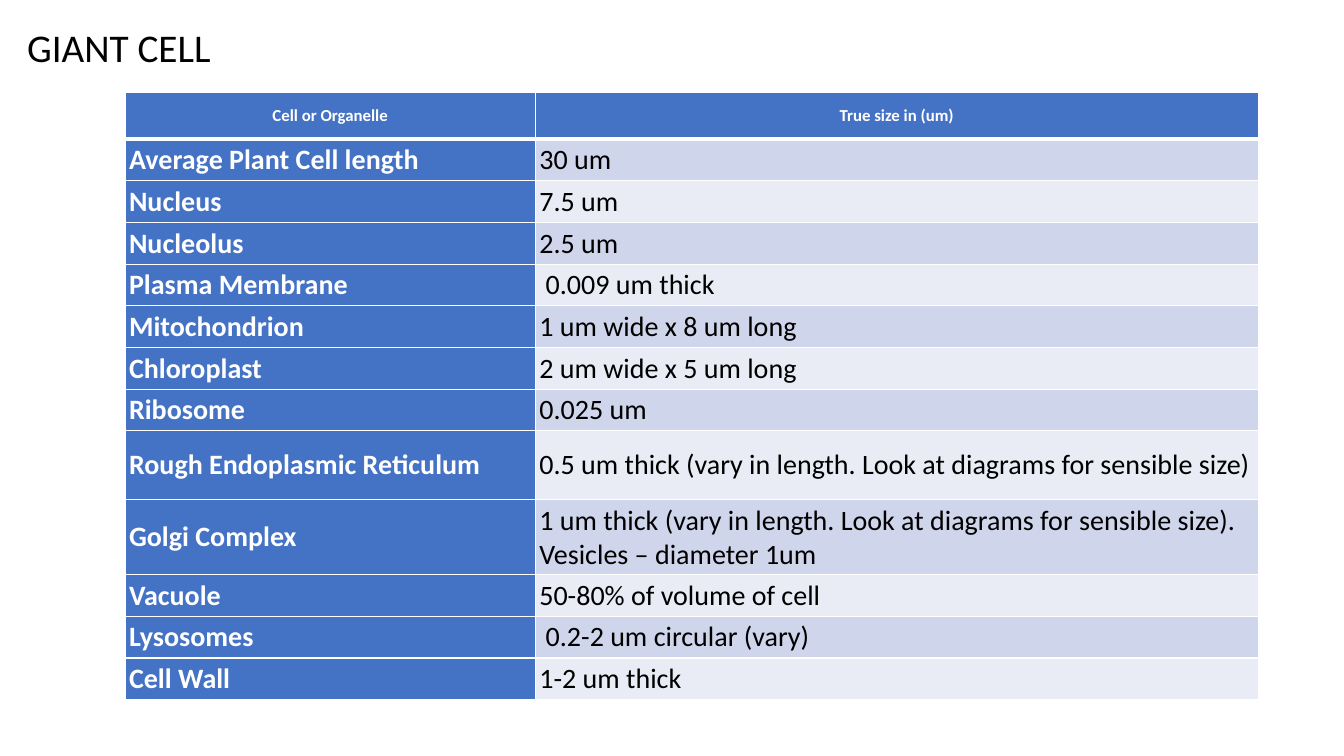
from lxml.etree import SubElement
from pptx import Presentation
from pptx.dml.color import RGBColor
from pptx.enum.text import MSO_ANCHOR, PP_ALIGN
from pptx.oxml.ns import qn
from pptx.util import Inches, Pt

FONT = "Calibri"
COLORS = {
    "white": "FFFFFF",
    "black": "000000",
    "blue": "4472C4",
    "band_dark": "CFD5EA",
    "band_light": "E9EBF5",
}
HEADINGS = ("Cell or Organelle", "True size in (um)")
ORGANELLES = [
    ("Average Plant Cell length", "30 um"),
    ("Nucleus", "7.5 um"),
    ("Nucleolus", "2.5 um"),
    ("Plasma Membrane", " 0.009 um thick"),
    ("Mitochondrion", "1 um wide x 8 um long"),
    ("Chloroplast", "2 um wide x 5 um long"),
    ("Ribosome", "0.025 um"),
    ("Rough Endoplasmic Reticulum",
     "0.5 um thick (vary in length. Look at diagrams for sensible size)"),
    ("Golgi Complex",
     "1 um thick (vary in length. Look at diagrams for sensible size). "
     "Vesicles – diameter 1um"),
    ("Vacuole", "50-80% of volume of cell"),
    ("Lysosomes", " 0.2-2 um circular (vary)"),
    ("Cell Wall", "1-2 um thick"),
]
TALL_ORGANELLES = ("Rough Endoplasmic Reticulum", "Golgi Complex")
COLUMN_WIDTHS = (4.07, 7.17)
HEADING_HEIGHT, ROW_HEIGHT, TALL_HEIGHT = 0.46, 0.41, 0.68
CELL_MARGIN = 0.04


def style_paragraph(paragraph, size, color, bold=False, align=PP_ALIGN.LEFT):
    paragraph.alignment = align
    paragraph.font.name = FONT
    paragraph.font.size = Pt(size)
    paragraph.font.bold = bold
    paragraph.font.color.rgb = RGBColor.from_string(COLORS[color])


def add_title(slide, title):
    box = slide.shapes.add_textbox(
        Inches(0.17), Inches(0.18), Inches(2.15), Inches(1.11))
    box.text_frame.word_wrap = True
    box.text_frame.text = title
    style_paragraph(box.text_frame.paragraphs[0], 28, "black")


def add_borders(cell, bottom_width, top_width):
    properties = cell._tc.get_or_add_tcPr()
    widths = {"lnL": 1, "lnR": 1, "lnT": top_width, "lnB": bottom_width}
    for side, width in widths.items():
        line = SubElement(properties, qn(f"a:{side}"), w=str(Pt(width)))
        fill = SubElement(line, qn("a:solidFill"))
        SubElement(fill, qn("a:srgbClr"), val=COLORS["white"])


def fill_cell(cell, text, row, column):
    is_heading = row == 0
    is_label = is_heading or column == 0
    band = "band_dark" if row % 2 else "band_light"
    cell.text = text
    cell.vertical_anchor = MSO_ANCHOR.MIDDLE
    cell.margin_left = cell.margin_right = Inches(CELL_MARGIN)
    cell.margin_top = cell.margin_bottom = Inches(CELL_MARGIN)
    style_paragraph(
        cell.text_frame.paragraphs[0],
        size=12 if is_heading else 20,
        color="white" if is_label else "black",
        bold=is_label,
        align=PP_ALIGN.CENTER if is_heading else PP_ALIGN.LEFT)
    add_borders(cell, 3 if is_heading else 1, 3 if row == 1 else 1)
    cell.fill.solid()
    cell.fill.fore_color.rgb = RGBColor.from_string(
        COLORS["blue" if is_label else band])


def add_size_table(slide):
    entries = [HEADINGS, *ORGANELLES]
    heights = [HEADING_HEIGHT] + [
        TALL_HEIGHT if name in TALL_ORGANELLES else ROW_HEIGHT
        for name, _ in ORGANELLES]
    sizes = slide.shapes.add_table(
        len(entries), len(HEADINGS), Inches(1.24), Inches(0.92),
        Inches(sum(COLUMN_WIDTHS)), Inches(sum(heights))).table
    sizes.first_col = True
    for column, width in zip(sizes.columns, COLUMN_WIDTHS):
        column.width = Inches(width)
    for row, (entry, height) in enumerate(zip(entries, heights)):
        sizes.rows[row].height = Inches(height)
        for column, text in enumerate(entry):
            fill_cell(sizes.cell(row, column), text, row, column)


def main():
    presentation = Presentation()
    presentation.slide_width = Inches(13.33)
    presentation.slide_height = Inches(7.5)
    slide = presentation.slides.add_slide(presentation.slide_layouts[6])
    add_title(slide, "GIANT CELL")
    add_size_table(slide)
    presentation.save("out.pptx")


if __name__ == "__main__":
    main()
